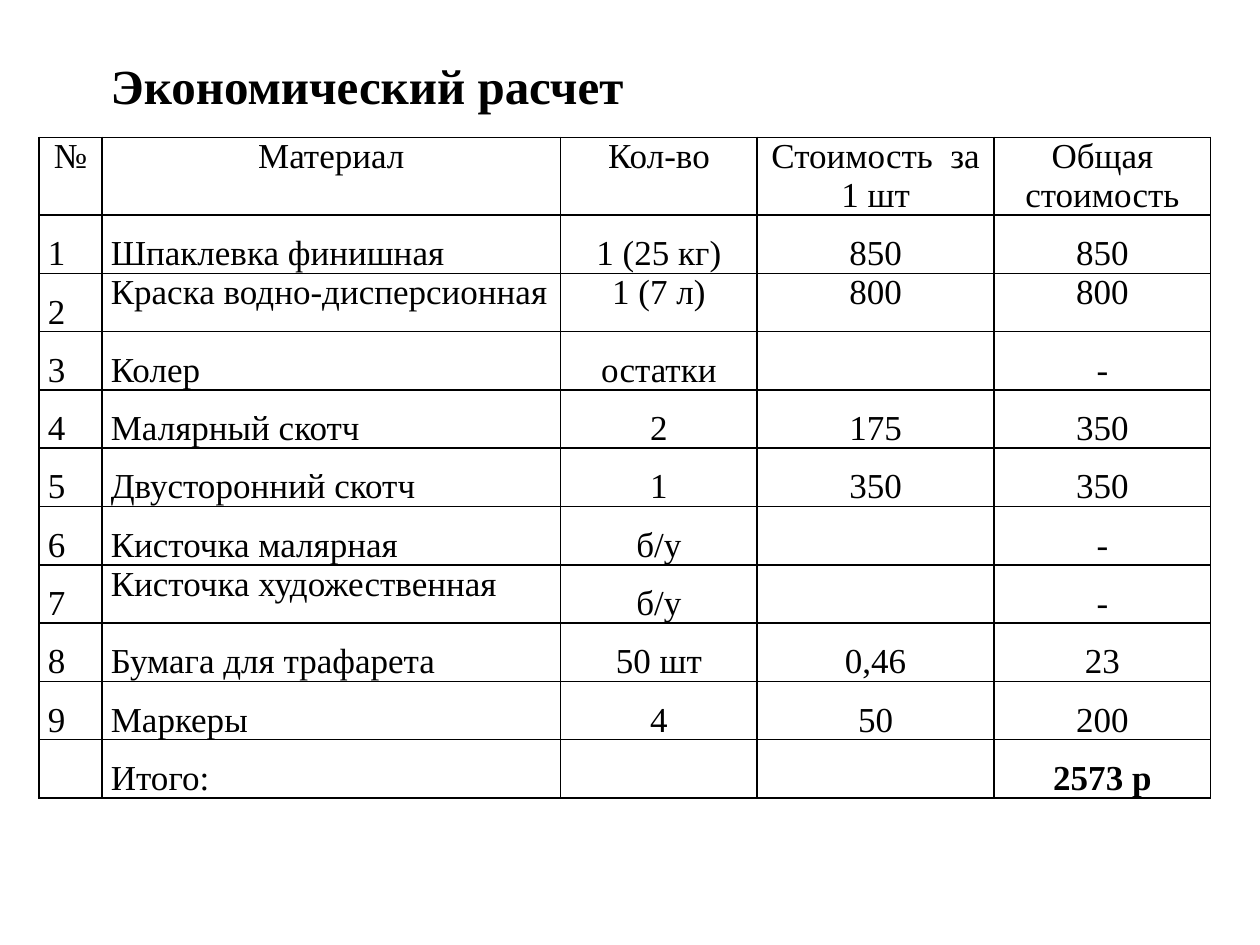
from lxml.etree import SubElement
from pptx import Presentation
from pptx.dml.color import RGBColor
from pptx.enum.text import PP_ALIGN as Align
from pptx.oxml.ns import qn
from pptx.util import Inches, Pt

TITLE = "Экономический расчет"
HEADER = ("№", "Материал", "Кол-во", "Стоимость  за 1 шт", "Общая стоимость")
COSTS = [
    ("1", "Шпаклевка финишная", "1 (25 кг)", "850", "850"),
    ("2", "Краска водно-дисперсионная", "1 (7 л)", "800", "800"),
    ("3", "Колер", "остатки", "", "-"),
    ("4", "Малярный скотч", "2", "175", "350"),
    ("5", "Двусторонний скотч", "1", "350", "350"),
    ("6", "Кисточка малярная", "б/у", "", "-"),
    ("7", "Кисточка художественная", "б/у", "", "-"),
    ("8", "Бумага для трафарета", "50 шт", "0,46", "23"),
    ("9", "Маркеры", "4", "50", "200"),
    ("", "Итого:", "", "", "2573 р"),
]
ROWS = [HEADER] + COSTS
COLUMN_WIDTHS = (0.5, 3.64, 1.56, 1.88, 1.72)
ROW_HEIGHTS = [0.58] + [0.43] * len(COSTS)
SINGLE_SPACED = {(2, 1), (2, 2), (2, 3), (2, 4), (7, 1)}
TOTAL = (len(COSTS), 4)
THEME = {"font": "Times New Roman", "ink": "000000", "title": 28, "cell": 20, "border": 1}


def add_span(para, text, size, bold=False):
    span = para.add_run()
    span.text = text
    span.font.name = THEME["font"]
    span.font.size = Pt(size)
    span.font.bold = bold
    span.font.color.rgb = RGBColor.from_string(THEME["ink"])


def add_borders(cell):
    properties = cell._tc.get_or_add_tcPr()
    for index, side in enumerate(("lnL", "lnR", "lnT", "lnB")):
        line = properties.makeelement(qn(f"a:{side}"), {"w": str(Pt(THEME["border"]))})
        fill = SubElement(line, qn("a:solidFill"))
        SubElement(fill, qn("a:srgbClr"), val=THEME["ink"])
        properties.insert(index, line)


def fill_cell(cell, text, row, column):
    cell.margin_left = cell.margin_right = Inches(0.07)
    cell.margin_top = cell.margin_bottom = 0
    cell.fill.background()
    add_borders(cell)
    para = cell.text_frame.paragraphs[0]
    para.alignment = Align.CENTER if row == 0 or column > 1 else Align.JUSTIFY
    if row > 0 and (row, column) not in SINGLE_SPACED:
        para.line_spacing = 1.5
    if text:
        add_span(para, text, THEME["cell"], (row, column) == TOTAL)


def add_cost_table(page):
    frame = page.shapes.add_table(
        len(ROWS), len(HEADER), Inches(0.31), Inches(1.09),
        Inches(sum(COLUMN_WIDTHS)), Inches(sum(ROW_HEIGHTS)),
    )
    table = frame.table
    table.horz_banding = False
    for column, width in zip(table.columns, COLUMN_WIDTHS):
        column.width = Inches(width)
    for row, height in zip(table.rows, ROW_HEIGHTS):
        row.height = Inches(height)
    for row, texts in enumerate(ROWS):
        for column, text in enumerate(texts):
            fill_cell(table.cell(row, column), text, row, column)


def add_title(page):
    box = page.shapes.add_textbox(Inches(0.78), Inches(0.39), Inches(5.31), Inches(0.57))
    box.text_frame.word_wrap = True
    add_span(box.text_frame.paragraphs[0], TITLE, THEME["title"], True)


def main():
    deck = Presentation()
    deck.slide_width, deck.slide_height = Inches(10), Inches(7.5)
    page = deck.slides.add_slide(deck.slide_layouts[6])
    add_cost_table(page)
    add_title(page)
    deck.save("out.pptx")


if __name__ == "__main__":
    main()
